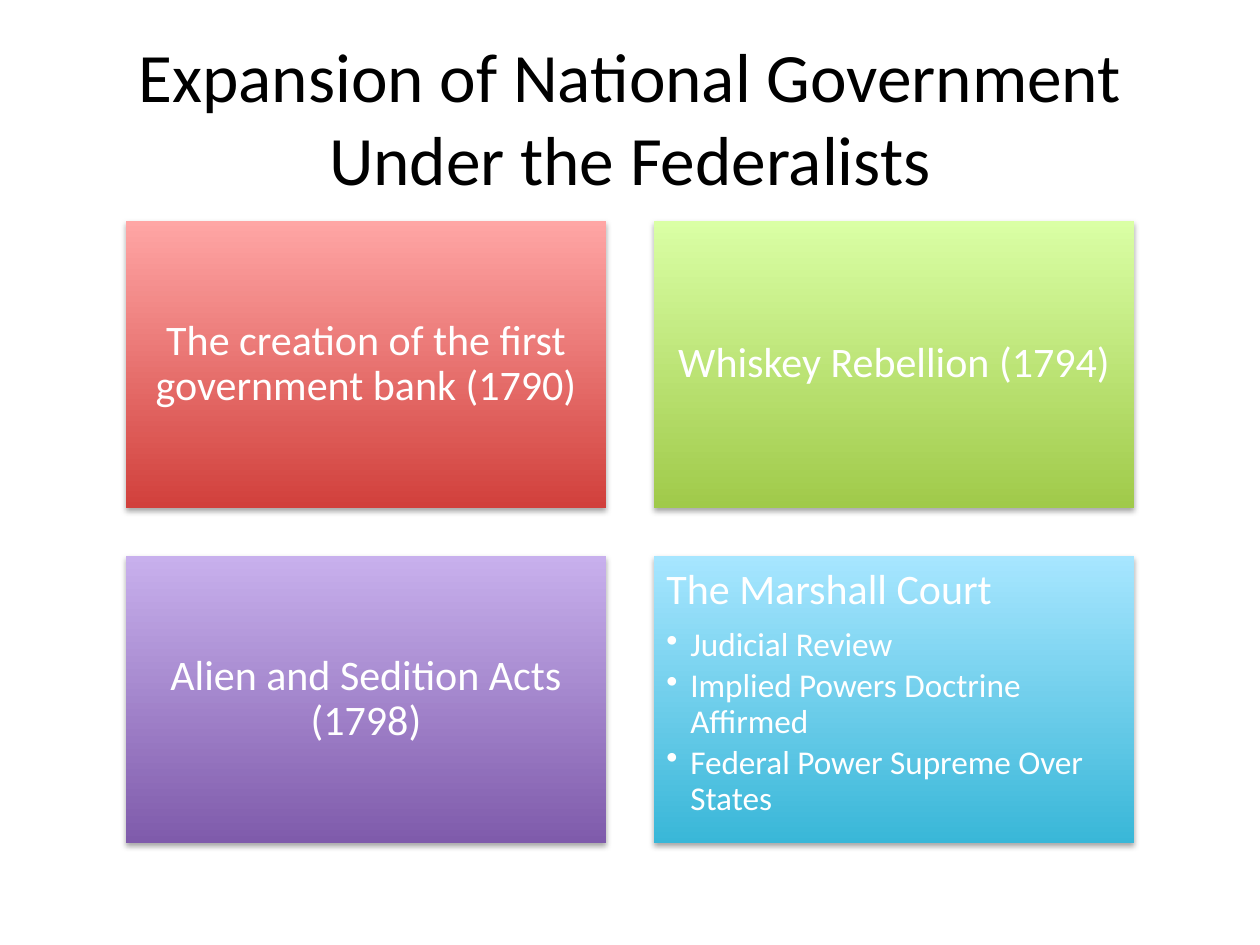
from dataclasses import dataclass

from lxml.etree import SubElement
from pptx import Presentation
from pptx.dml.color import RGBColor
from pptx.enum.shapes import MSO_SHAPE
from pptx.enum.text import MSO_ANCHOR, MSO_AUTO_SIZE, PP_ALIGN
from pptx.oxml.ns import qn
from pptx.util import Inches, Pt


@dataclass(frozen=True)
class Theme:
    font: str = "Calibri"
    title_color: str = "000000"
    card_text: str = "FFFFFF"
    shadow: str = "000000"
    title_size: float = 39.6
    heading_size: float = 24
    bullet_size: float = 19


@dataclass(frozen=True)
class Card:
    heading: str
    bottom_color: str
    top_color: str
    bullets: tuple[str, ...] = ()


THEME = Theme()
CARDS = (
    Card("The creation of the first government bank (1790)", "D1403C", "FFA6A5"),
    Card("Whiskey Rebellion (1794)", "A0CA4A", "DAFFA5"),
    Card("Alien and Sedition Acts (1798)", "7F5BAB", "C8B0ED"),
    Card("The Marshall Court", "39B7D8", "A7E6FF",
         ("Judicial Review", "Implied Powers Doctrine Affirmed",
          "Federal Power Supreme Over States")),
)
COLUMNS = 2
GRID_LEFT, GRID_TOP = 1, 1.75
CARD_WIDTH, CARD_HEIGHT, GAP = 3.81, 2.28, 0.38


def style_paragraph(para, size: float, color: str) -> None:
    para.font.name = THEME.font
    para.font.size = Pt(size)
    para.font.color.rgb = RGBColor.from_string(color)


def add_shadow(shape) -> None:
    """Give the shape a soft shadow that falls straight down."""
    shape.shadow.inherit = False
    effects = shape._element.spPr.find(qn("a:effectLst"))
    shadow = SubElement(effects, qn("a:outerShdw"), blurRad=str(Pt(3.1)),
                        dist=str(Pt(1.8)), dir="5400000", rotWithShape="0")
    color = SubElement(shadow, qn("a:srgbClr"), val=THEME.shadow)
    SubElement(color, qn("a:alpha"), val="35000")


def add_bullet(para) -> None:
    properties = para._p.get_or_add_pPr()
    indent = Inches(0.19)
    properties.set("marL", str(indent))
    properties.set("indent", str(-indent))
    SubElement(properties, qn("a:buChar"), char="•")


def fill_text(frame, card: Card) -> None:
    frame.word_wrap = True
    frame.margin_left = frame.margin_right = Inches(0.1)
    frame.margin_top = frame.margin_bottom = Inches(0.1)
    frame.vertical_anchor = MSO_ANCHOR.TOP if card.bullets else MSO_ANCHOR.MIDDLE

    heading = frame.paragraphs[0]
    heading.text = card.heading
    heading.alignment = PP_ALIGN.LEFT if card.bullets else PP_ALIGN.CENTER
    heading.line_spacing = 0.9
    heading.space_after = Pt(THEME.heading_size * 0.35)
    style_paragraph(heading, THEME.heading_size, THEME.card_text)

    for text in card.bullets:
        para = frame.add_paragraph()
        para.text = text
        para.level = 1
        para.alignment = PP_ALIGN.LEFT
        para.line_spacing = 0.9
        para.space_after = Pt(THEME.bullet_size * 0.15)
        add_bullet(para)
        style_paragraph(para, THEME.bullet_size, THEME.card_text)


def add_card(page, card: Card, left: float, top: float) -> None:
    box = page.shapes.add_shape(MSO_SHAPE.RECTANGLE, Inches(left), Inches(top),
                                Inches(CARD_WIDTH), Inches(CARD_HEIGHT))
    box.fill.gradient()
    box.fill.gradient_angle = 90
    for stop, color in zip(box.fill.gradient_stops, (card.bottom_color, card.top_color)):
        stop.color.rgb = RGBColor.from_string(color)
    box.line.fill.background()
    add_shadow(box)
    fill_text(box.text_frame, card)


def set_title(page, text: str) -> None:
    title = page.shapes.title
    title.left, title.top = Inches(0.5), Inches(0.3)
    title.width, title.height = Inches(9), Inches(1.25)
    frame = title.text_frame
    frame.text = text
    frame.word_wrap = True
    frame.auto_size = MSO_AUTO_SIZE.NONE
    frame.vertical_anchor = MSO_ANCHOR.MIDDLE
    para = frame.paragraphs[0]
    para.alignment = PP_ALIGN.CENTER
    style_paragraph(para, THEME.title_size, THEME.title_color)


def main() -> None:
    deck = Presentation()
    deck.slide_width, deck.slide_height = Inches(10), Inches(7.5)
    title_only = deck.slide_layouts[5]
    page = deck.slides.add_slide(title_only)
    set_title(page, "Expansion of National Government Under the Federalists")
    for index, card in enumerate(CARDS):
        row, column = divmod(index, COLUMNS)
        add_card(page, card, GRID_LEFT + column * (CARD_WIDTH + GAP),
                 GRID_TOP + row * (CARD_HEIGHT + GAP))
    deck.save("out.pptx")


if __name__ == "__main__":
    main()
